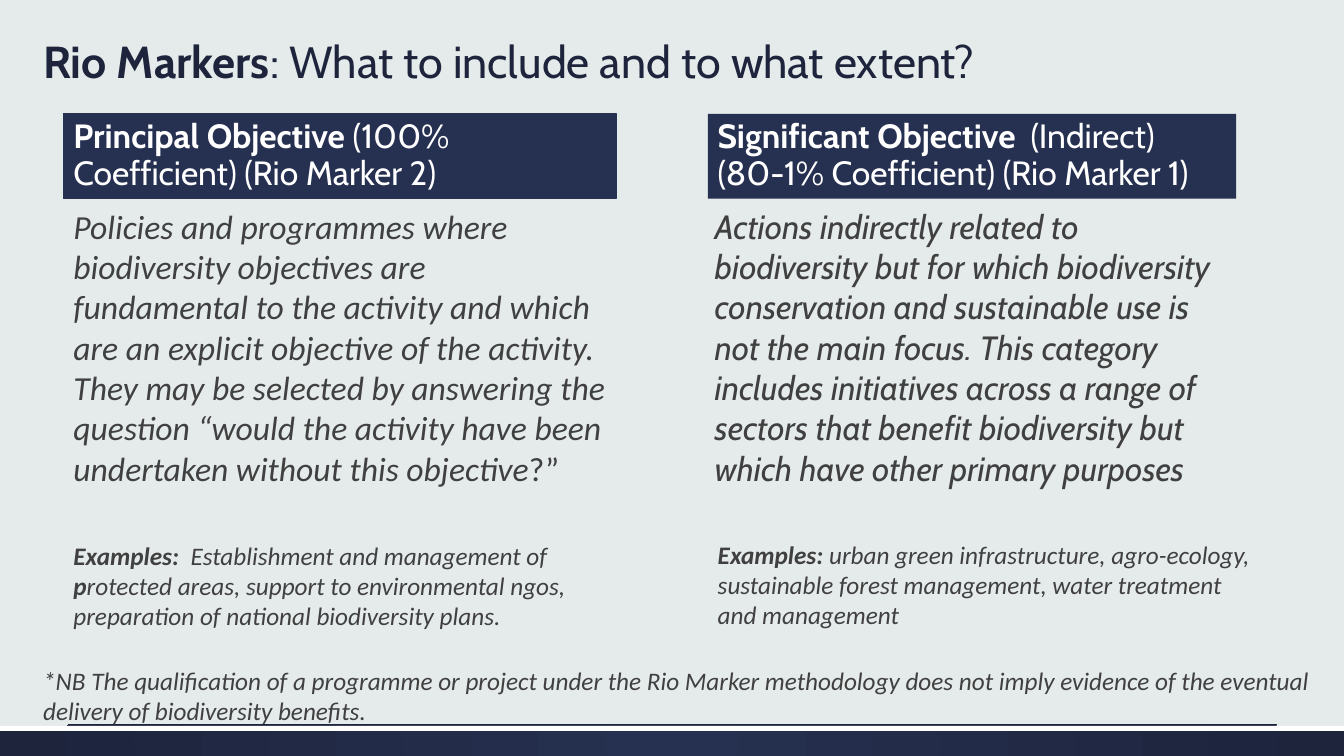
from lxml import etree
from pptx import Presentation, util as u
from pptx.dml.color import RGBColor
from pptx.enum import shapes, text
from pptx.oxml import ns

NAVY, DARK, GREY, WHITE, PALE = "263050", "1D243C", "404040", "FFFFFF", "E5EAEA"

TITLE = [("Rio Markers", "b"), (": What to include and to what extent?", "")]
HEADS = [
    (0.63, 5.48, [("Principal Objective ", "b"),
                  ("(100% Coefficient) (Rio Marker 2)", "")]),
    (7.02, 5.24, [("Significant Objective  ", "b"),
                  ("(Indirect) (80-1% Coefficient) (Rio Marker 1)", "")]),
]
BODIES = [
    (0.63, 5.48, "Calibri", [
        ("Policies and programmes where biodiversity objectives are fundamental "
         "to the activity and which are an explicit objective of the activity. "
         "They may be selected by answering the question “would the activity "
         "have been undertaken without this objective", "i"), ("?”", "")]),
    (6.99, 5.3, "Cabin", [
        ("Actions indirectly related to biodiversity but for which biodiversity "
         "conservation and sustainable use is not the main focus. This category "
         "includes initiatives across a range of sectors that benefit "
         "biodiversity but which have other primary purposes", "i")]),
]
CASES = [
    (0.63, 5.31, [
        ("Examples:  ", "bi"), ("Establishment and management of ", "i"),
        ("p", "bi"), ("rotected areas, support to environmental ngos, "
                      "preparation of national biodiversity plans.", "i")]),
    (7.02, 5.3, [
        ("Examples: ", "bi"),
        ("urban green infrastructure, agro-ecology, sustainable forest "
         "management, water treatment and management", "i")]),
]
NOTE = [("*NB The qualification of a programme or project under the Rio Marker "
         "methodology does not imply evidence of the eventual delivery of "
         "biodiversity benefits.", "i")]


def paint(color, tone):
    color.rgb = RGBColor.from_string(tone)


def fill(part, tone):
    part.fill.solid()
    paint(part.fill.fore_color, tone)


def place(box):
    return [u.Inches(n) for n in box]


def bar(box, tone):
    shape = slide.shapes.add_shape(shapes.MSO_SHAPE.RECTANGLE, *place(box))
    shape.shadow.inherit = False
    shape.line.fill.background()
    fill(shape, tone)
    return shape


def write(shape, runs, size, face, tone, anchor=text.MSO_ANCHOR.TOP, gap=1.0):
    frame = shape.text_frame
    frame.word_wrap = True
    frame.vertical_anchor = anchor
    para = frame.paragraphs[0]
    para.alignment = text.PP_ALIGN.LEFT
    para.line_spacing = gap
    para.font.size = u.Pt(size)
    para.font.name = face
    paint(para.font.color, tone)
    for words, style in runs:
        run = para.add_run()
        run.text = words
        run.font.bold = "b" in style
        run.font.italic = "i" in style


def label(box, *style):
    write(slide.shapes.add_textbox(*place(box)), *style)


deck = Presentation()
deck.slide_width, deck.slide_height = u.Inches(13.33), u.Inches(7.5)
slide = deck.slides.add_slide(deck.slide_layouts[6])
fill(slide.background, PALE)

foot = bar((0, 7.2, 13.33, 0.3), NAVY)
foot.fill.gradient()
for stop, tone, spot in zip(foot.fill.gradient_stops, (NAVY, DARK), (0, 1)):
    paint(stop.color, tone)
    stop.position = spot
grad = foot.fill._xPr.find(ns.qn("a:gradFill"))
grad.remove(grad.find(ns.qn("a:lin")))
ring = etree.SubElement(grad, ns.qn("a:path"), path="circle")
etree.SubElement(ring, ns.qn("a:fillToRect"), dict.fromkeys("ltrb", "50000"))
bar((0, 7.2, 13.33, 0.05), WHITE)

rule = slide.shapes.add_connector(
    shapes.MSO_CONNECTOR.STRAIGHT, *place((0.67, 7.19, 12.67, 7.19)))
rule.line.width = u.Pt(0.75)
paint(rule.line.color, DARK)
etree.SubElement(rule._element.spPr, ns.qn("a:effectLst"))

label((0.33, -0.06, 11.92, 0.98), TITLE, 32, "Cabin", DARK,
      text.MSO_ANCHOR.BOTTOM, 0.9)
for left, width, runs in HEADS:
    head = bar((left, 1.13, width, 0.84), NAVY)
    write(head, runs, 24, "Cabin", WHITE, text.MSO_ANCHOR.MIDDLE, 0.9)
    if left == HEADS[0][0]:
        head.line.width = u.Pt(0.75)
        paint(head.line.color, NAVY)
label((0.33, 6.55, 12.77, 0.71), NOTE, 18, "Calibri", GREY)
for left, width, face, runs in BODIES:
    label((left, 1.99, width, 2.93), runs, 24, face, GREY)
for left, top, runs in CASES:
    label((left, top, 5.48, 1.01), runs, 18, "Calibri", GREY)

deck.save("out.pptx")
